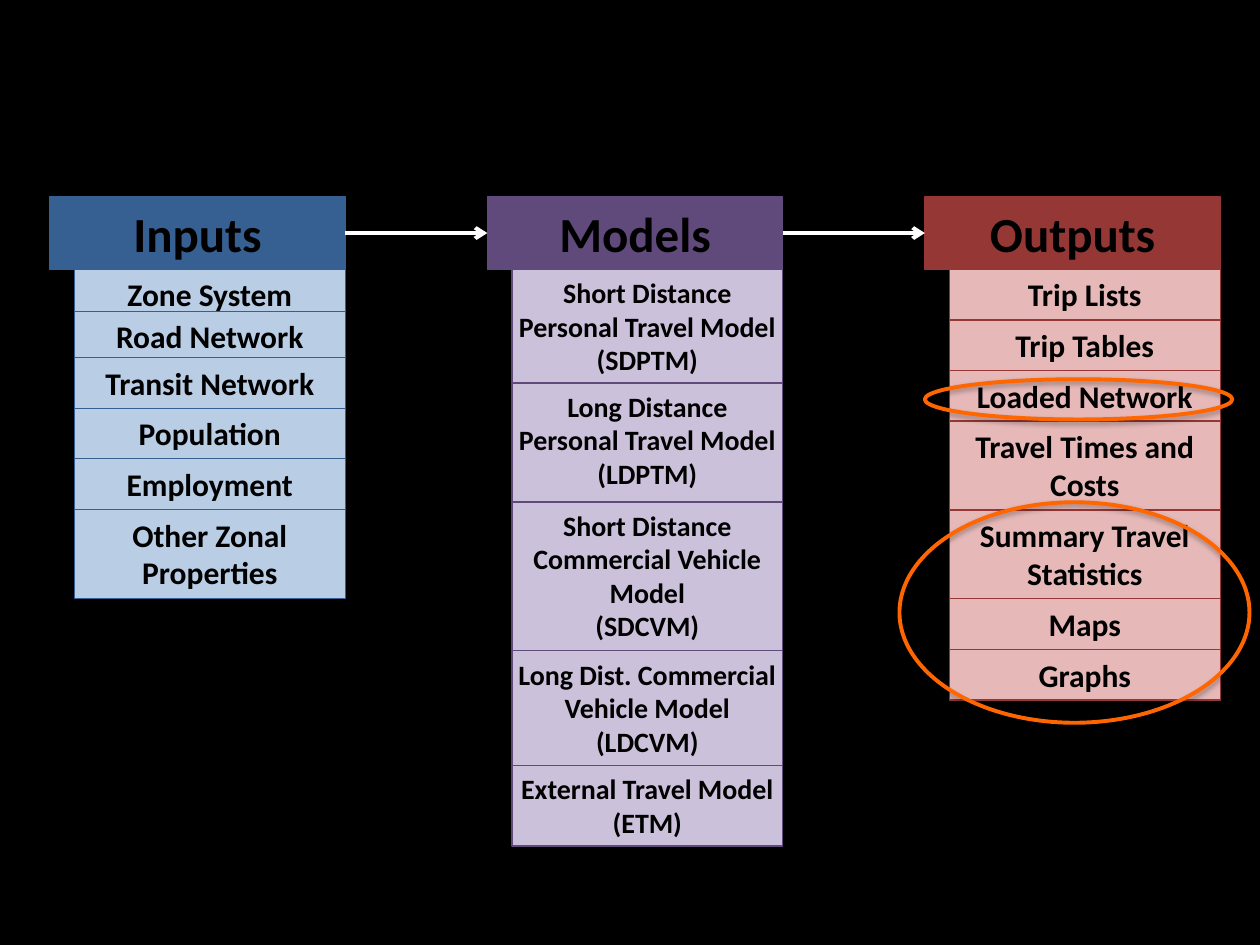
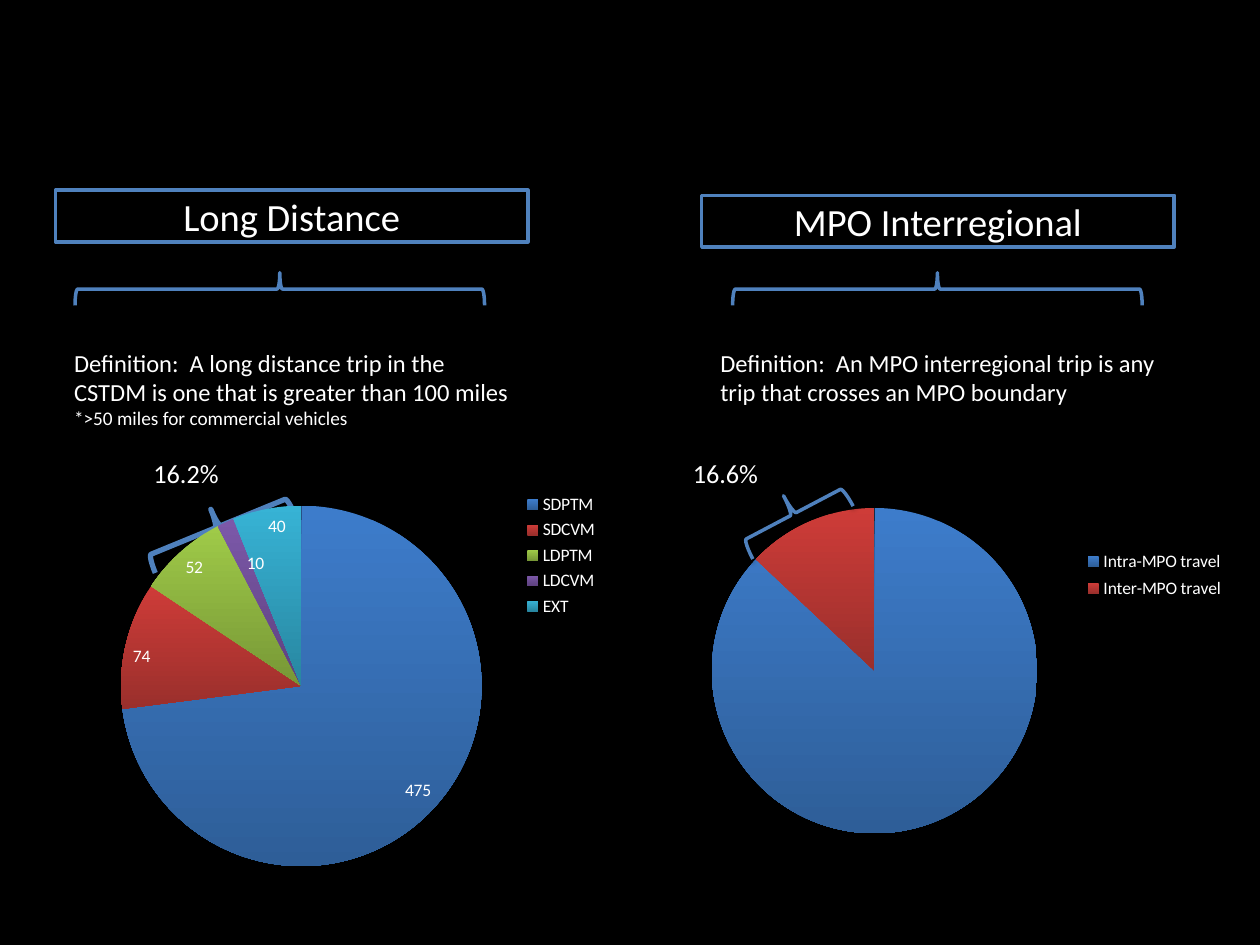
from lxml import etree
from pptx import Presentation
from pptx.chart.data import CategoryChartData as Data
from pptx.dml.color import RGBColor as RGB
from pptx.enum.chart import XL_CHART_TYPE as Kind
from pptx.enum.chart import XL_LABEL_POSITION as Spot
from pptx.enum.chart import XL_LEGEND_POSITION as Side
from pptx.enum.shapes import MSO_CONNECTOR as Link
from pptx.enum.shapes import MSO_SHAPE as Form
from pptx.enum.text import MSO_ANCHOR as Anchor
from pptx.enum.text import PP_ALIGN as Align
from pptx.oxml.ns import qn
from pptx.util import Pt

FONT = "Calibri"
BLACK = RGB(0, 0, 0)
WHITE = RGB(255, 255, 255)
ORANGE = RGB(0xFF, 0x66, 0x00)
BLUE = RGB(0x4F, 0x81, 0xBD)

# Dark header and light row colours of each column
NAVY, SKY = RGB(0x37, 0x60, 0x92), RGB(0xB9, 0xCD, 0xE5)
PLUM, LILAC = RGB(0x60, 0x4A, 0x7B), RGB(0xCC, 0xC1, 0xDA)
WINE, ROSE = RGB(0x95, 0x37, 0x35), RGB(0xE6, 0xB9, 0xB8)

# Top and bottom colours of the pie slices
SLICES = [
    (RGB(0x3D, 0x7C, 0xCB), RGB(0x2E, 0x5E, 0x98)),
    (RGB(0xCE, 0x3C, 0x38), RGB(0x9A, 0x2F, 0x2C)),
    (RGB(0x9F, 0xCA, 0x48), RGB(0x77, 0x97, 0x36)),
    (RGB(0x7C, 0x58, 0xA9), RGB(0x5D, 0x41, 0x7E)),
    (RGB(0x37, 0xB3, 0xD5), RGB(0x28, 0x86, 0xA0)),
]


def start(deck):
    """Add a black blank slide."""
    slide = deck.slides.add_slide(deck.slide_layouts[6])
    slide.background.fill.solid()
    slide.background.fill.fore_color.rgb = BLACK
    return slide


def shape(slide, form, box, fill, line, width):
    item = slide.shapes.add_shape(form, *map(Pt, box))
    item.shadow.inherit = False
    if fill is None:
        item.fill.background()
    else:
        item.fill.solid()
        item.fill.fore_color.rgb = fill
    item.line.color.rgb = line
    item.line.width = Pt(width)
    return item


def shade(item, alpha):
    """Give a shape a soft shadow straight below it."""
    effects = item._element.spPr.find(qn("a:effectLst"))
    outer = etree.SubElement(effects, qn("a:outerShdw"), blurRad=str(Pt(3.1)),
                             dist=str(Pt(1.7)), dir="5400000", rotWithShape="0")
    color = etree.SubElement(outer, qn("a:srgbClr"), val="000000")
    etree.SubElement(color, qn("a:alpha"), val=str(alpha * 1000))


def write(item, lines, color, bold=False, align=Align.LEFT, anchor=Anchor.TOP):
    """Fill a shape with one paragraph per (text, size) pair."""
    frame = item.text_frame
    frame.word_wrap = True
    frame.vertical_anchor = anchor
    for i, (text, size) in enumerate(lines):
        para = frame.add_paragraph() if i else frame.paragraphs[0]
        para.alignment = align
        run = para.add_run()
        run.text = text
        font = run.font
        font.name, font.size, font.bold = FONT, Pt(size), bold
        font.color.rgb = color


def note(slide, box, lines):
    item = slide.shapes.add_textbox(*map(Pt, box))
    write(item, lines, WHITE)


# ---- Flow slide ----

def column(slide, x, y, title, dark, light, size, rows, inset=7.2):
    """Header with a stack of rows, indented on the left."""
    wide, head, indent = 168.8, 41.4, 14
    top = shape(slide, Form.RECTANGLE, (x, y, wide, head), dark, dark, 0.75)
    write(top, [(title, 28)], BLACK, True, Align.CENTER)
    y += head
    for step, *texts in rows:
        box = (x + indent, y, wide - indent, max(step, 28.8))
        cell = shape(slide, Form.RECTANGLE, box, light, dark, 0.75)
        frame = cell.text_frame
        frame.margin_left = frame.margin_right = Pt(inset)
        write(cell, [(text, size) for text in texts], BLACK, True, Align.CENTER)
        y += step


def arrow(slide, x, y, wide):
    link = slide.shapes.add_connector(Link.STRAIGHT, Pt(x), Pt(y), Pt(x + wide), Pt(y))
    link.line.color.rgb = WHITE
    link.line.width = Pt(2.25)
    etree.SubElement(link.line._get_or_add_ln(), qn("a:tailEnd"), type="arrow")
    etree.SubElement(link._element.spPr, qn("a:effectLst"))


def flow(deck):
    slide = start(deck)
    left, top, pitch, gap = 28.5, 112.5, 250, 81.2
    one, two = 28.9, 50.8
    inputs = [(24, "Zone System"), (26.5, "Road Network"),
              (one, "Transit Network"), (one, "Population"),
              (one, "Employment"), (two, "Other Zonal Properties")]
    models = [(65, "Short Distance Personal Travel Model", "(SDPTM)"),
              (68, "Long Distance Personal Travel Model", "(LDPTM)"),
              (85, "Short Distance Commercial Vehicle Model", "(SDCVM)"),
              (65.5, "Long Dist. Commercial Vehicle Model", "(LDCVM)"),
              (46, "External Travel Model", "(ETM)")]
    outputs = [(one, "Trip Lists"), (one, "Trip Tables"),
               (one, "Loaded Network"), (two, "Travel Times and Costs"),
               (two, "Summary Travel Statistics"), (one, "Maps"),
               (one, "Graphs")]
    column(slide, left, top, "Inputs", NAVY, SKY, 18, inputs)
    column(slide, left + pitch, top, "Models", PLUM, LILAC, 16, models, 2.9)
    column(slide, left + 2 * pitch, top, "Outputs", WINE, ROSE, 18, outputs)
    for i in (1, 2):
        arrow(slide, left + i * pitch - gap, top + 20.7, gap)
    # Rings around the outputs of interest
    for box in ((528.5, 216.7, 175.7, 23), (514, 287, 200, 126)):
        shade(shape(slide, Form.OVAL, box, None, ORANGE, 2.25), 35)


# ---- Pie slide ----

def brace(slide, form, box, turn, width):
    item = shape(slide, form, box, None, BLUE, width)
    item.rotation = turn
    shade(item, 38)


def place(owner, after, **parts):
    """Put a manual layout into a chart element, after the named child."""
    for old in owner.findall(qn("c:layout")):
        owner.remove(old)
    layout = etree.Element(qn("c:layout"))
    manual = etree.SubElement(layout, qn("c:manualLayout"))
    for name, value in parts.items():
        etree.SubElement(manual, qn("c:" + name), val=str(value))
    prior = owner.find(qn("c:" + after)) if after else None
    if prior is None:
        owner.insert(0, layout)
    else:
        prior.addnext(layout)


def frame(x, y, w, h):
    return dict(xMode="edge", yMode="edge", x=x, y=y, w=w, h=h)


def pie(slide, box, values, plot, key):
    data = Data()
    data.categories = list(values)
    data.add_series("Series 1", list(values.values()))
    chart = slide.shapes.add_chart(Kind.PIE, *map(Pt, box), data).chart
    chart.has_title = False
    chart.font.name, chart.font.size = FONT, Pt(10)
    chart.font.color.rgb = WHITE
    chart.has_legend = True
    chart.legend.position = Side.RIGHT
    chart.legend.include_in_layout = False
    chart.plots[0].vary_by_categories = True
    for i in range(len(values)):
        look = chart.plots[0].series[0].points[i].format
        look.line.fill.background()
        look.fill.gradient()
        look.fill.gradient_angle = 270
        for stop, color in zip(look.fill.gradient_stops, SLICES[i]):
            stop.color.rgb = color
    area = chart._chartSpace.chart.plotArea
    place(area, None, layoutTarget="inner", **frame(*plot))
    place(chart.legend._element, "legendPos", **frame(*key))
    return chart


def label(chart):
    """Show values inside the slices, with the narrow one moved inwards."""
    plot = chart.plots[0]
    marks = plot.series[0].data_labels
    marks.show_value = True
    marks.position = Spot.INSIDE_END
    marks.font.size = Pt(10)
    marks.font.color.rgb = WHITE
    thin = plot.series[0].points[3].data_label
    thin.position = Spot.INSIDE_END
    place(thin._dLbl, "idx", x=0.03, y=0.06)


def panel(slide, x, y, title, drop, shift, lines):
    """Framed title, brace and definition; drop and shift nudge the first two."""
    top = shape(slide, Form.RECTANGLE, (x, y + drop, 270, 29.5), BLACK, BLUE, 2)
    write(top, [(title, 22)], WHITE, False, Align.CENTER, Anchor.MIDDLE)
    brace(slide, Form.LEFT_BRACE, (x + shift, y - 60.5, 18.7, 234), 90, 2)
    note(slide, (x + 3.5, y + 86.4, 267, 55), lines)


def pies(deck):
    slide = start(deck)
    top = 108.7
    # Long distance half
    panel(slide, 31.7, top, "Long Distance", 0, 118.8,
          [("Definition:  A long distance trip in the CSTDM is one that is "
            "greater than 100 miles", 14),
           ("*>50 miles for commercial vehicles", 11)])
    brace(slide, Form.RIGHT_BRACE, (113.8, 257.8, 21.6, 86.4), 247.7, 3)
    trips = {"SDPTM": 475, "SDCVM": 74, "LDPTM": 52, "LDCVM": 10, "EXT": 40}
    label(pie(slide, (23.8, 270, 349.2, 236.9), trips,
              (0.13, 0.08, 0.59, 0.87), (0.75, 0.04, 0.2, 0.32)))
    note(slide, (80.6, 257.8, 58, 25), [("16.2%", 15)])
    # Interregional half
    panel(slide, 401, top, "MPO Interregional", 2.9, 125.3,
          [("Definition:  An MPO interregional trip is any trip that crosses "
            "an MPO boundary", 14)])
    shares = {"Intra-MPO travel": 87, "Inter-MPO travel": 13}
    pie(slide, (379.4, 280, 329.8, 206.6), shares,
        (0.08, 0.05, 0.57, 0.9), (0.71, 0.15, 0.28, 0.17))
    brace(slide, Form.RIGHT_BRACE, (441.4, 261.4, 23.8, 64.8), 242.2, 2)
    note(slide, (388.8, 257.8, 58, 25), [("16.6%", 15)])


def main():
    deck = Presentation()
    deck.slide_width, deck.slide_height = Pt(720), Pt(540)
    flow(deck)
    pies(deck)
    deck.save("out.pptx")


if __name__ == "__main__":
    main()
